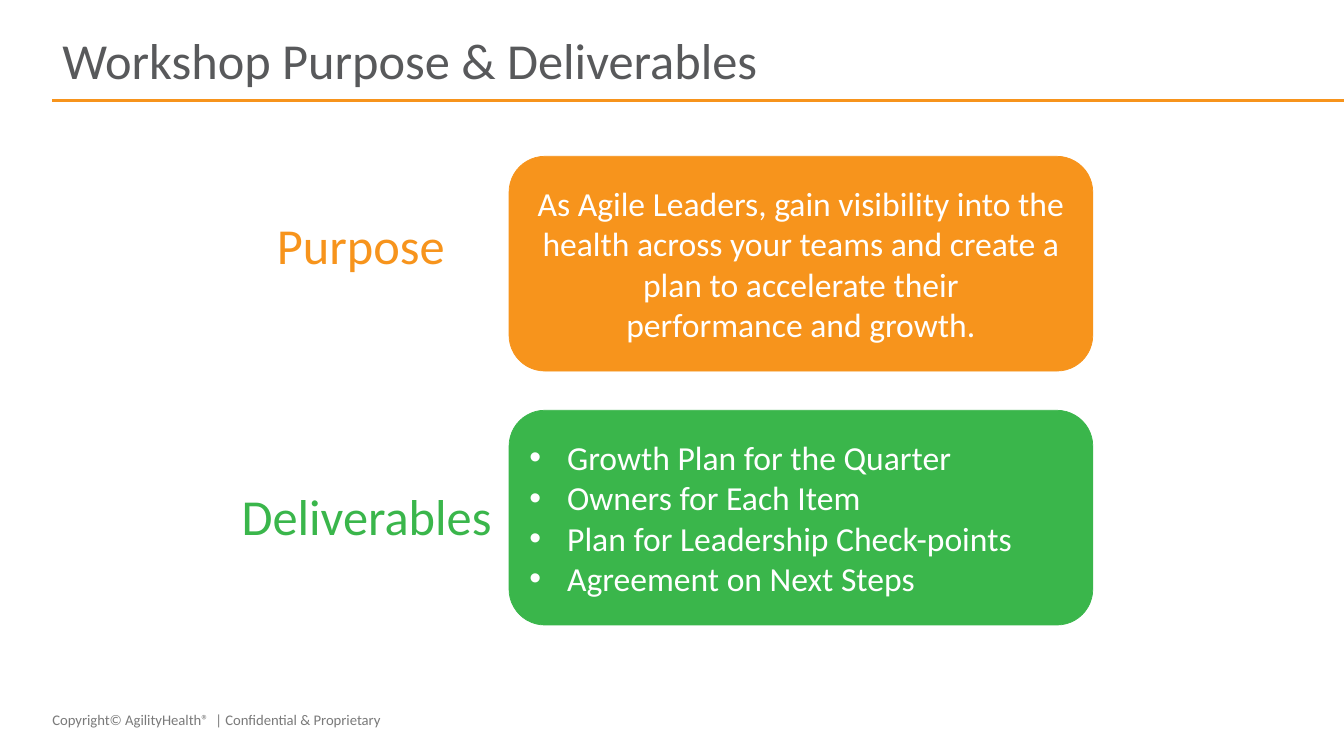
from lxml.etree import SubElement
from pptx import Presentation
from pptx.dml.color import RGBColor
from pptx.enum.shapes import MSO_CONNECTOR, MSO_SHAPE
from pptx.enum.text import MSO_ANCHOR, PP_ALIGN
from pptx.oxml.ns import qn
from pptx.util import Cm, Pt

ORANGE = RGBColor(0xF7, 0x94, 0x1C)
GREEN = RGBColor(0x3A, 0xB6, 0x4B)
DARK_GRAY = RGBColor(0x58, 0x59, 0x5B)
FOOTER_GRAY = RGBColor(0x7A, 0x7A, 0x7A)
WHITE = RGBColor(0xFF, 0xFF, 0xFF)

PAGE_WIDTH = Cm(33.87)
MARGIN = Cm(1.32)
PURPOSE_LINES = [
    "As Agile Leaders, gain visibility into the health across your teams "
    "and create a plan to accelerate their",
    "performance and growth.",
]
DELIVERABLES = [
    "Growth Plan for the Quarter",
    "Owners for Each Item",
    "Plan for Leadership Check-points",
    "Agreement on Next Steps",
]


def set_font(paragraph, size, color):
    """Set the typeface, size and colour of a whole paragraph."""
    paragraph.font.name = "Calibri"
    paragraph.font.size = Pt(size)
    paragraph.font.color.rgb = color


def add_bullet(paragraph):
    """Give a paragraph a round bullet with a hanging indent."""
    properties = paragraph._p.get_or_add_pPr()
    properties.set("marL", str(Cm(0.95)))
    properties.set("indent", str(-Cm(0.95)))
    SubElement(properties, qn("a:buFont"), typeface="Arial")
    SubElement(properties, qn("a:buChar"), char="•")


def add_title(page, text):
    """Fill and place the title placeholder."""
    title = page.shapes.title
    title.left, title.top = MARGIN, Cm(0.69)
    title.width, title.height = Cm(31.22), Cm(1.78)
    title.text_frame.vertical_anchor = MSO_ANCHOR.MIDDLE
    paragraph = title.text_frame.paragraphs[0]
    paragraph.text = text
    paragraph.alignment = PP_ALIGN.LEFT
    paragraph.line_spacing = 0.9
    set_font(paragraph, 36, DARK_GRAY)


def add_title_rule(page):
    """Draw the rule from the left margin to the page edge."""
    rule = page.shapes.add_connector(
        MSO_CONNECTOR.STRAIGHT, MARGIN, Cm(2.54), PAGE_WIDTH, Cm(2.54))
    rule.line.color.rgb = ORANGE
    rule.line.width = Pt(2)
    SubElement(rule._element.spPr, qn("a:effectLst"))


def add_label(page, text, left, top, width, height, size, color):
    """Add a text box with one line of text."""
    box = page.shapes.add_textbox(left, top, width, height)
    box.text_frame.word_wrap = True
    paragraph = box.text_frame.paragraphs[0]
    paragraph.text = text
    set_font(paragraph, size, color)


def add_card(page, top, color):
    """Add a rounded card and return its text frame."""
    card = page.shapes.add_shape(
        MSO_SHAPE.ROUNDED_RECTANGLE, Cm(12.83), top, Cm(14.71), Cm(5.41))
    card.shadow.inherit = False
    card.fill.solid()
    card.fill.fore_color.rgb = color
    card.line.color.rgb = color
    card.line.width = Pt(0.5)
    card.text_frame.word_wrap = True
    card.text_frame.vertical_anchor = MSO_ANCHOR.MIDDLE
    return card.text_frame


def add_purpose_card(page):
    """Add the centred purpose statement."""
    paragraph = add_card(page, Cm(3.94), ORANGE).paragraphs[0]
    paragraph.alignment = PP_ALIGN.CENTER
    opening, closing = PURPOSE_LINES
    paragraph.add_run().text = opening
    paragraph.add_line_break()
    paragraph.add_run().text = closing
    set_font(paragraph, 24, WHITE)


def add_deliverables_card(page):
    """Add the bulleted deliverables."""
    frame = add_card(page, Cm(10.34), GREEN)
    frame.text = "\n".join(DELIVERABLES)
    for paragraph in frame.paragraphs:
        paragraph.alignment = PP_ALIGN.LEFT
        add_bullet(paragraph)
        set_font(paragraph, 24, WHITE)


def main():
    """Build the slide and save the deck."""
    deck = Presentation()
    deck.slide_width, deck.slide_height = PAGE_WIDTH, Cm(19.05)
    page = deck.slides.add_slide(deck.slide_layouts.get_by_name("Title Only"))
    add_label(page, "Copyright© AgilityHealth®  | Confidential & Proprietary",
              Cm(1.07), Cm(17.78), Cm(11.43), Cm(0.71), 10.5, FOOTER_GRAY)
    add_title_rule(page)
    add_title(page, "Workshop Purpose & Deliverables")
    add_purpose_card(page)
    add_deliverables_card(page)
    add_label(page, "Purpose", Cm(6.73), Cm(5.26), Cm(5.21), Cm(1.8), 36, ORANGE)
    add_label(page, "Deliverables", Cm(5.84), Cm(12.09), Cm(7.01), Cm(1.8), 36, GREEN)
    deck.save("out.pptx")


if __name__ == "__main__":
    main()
